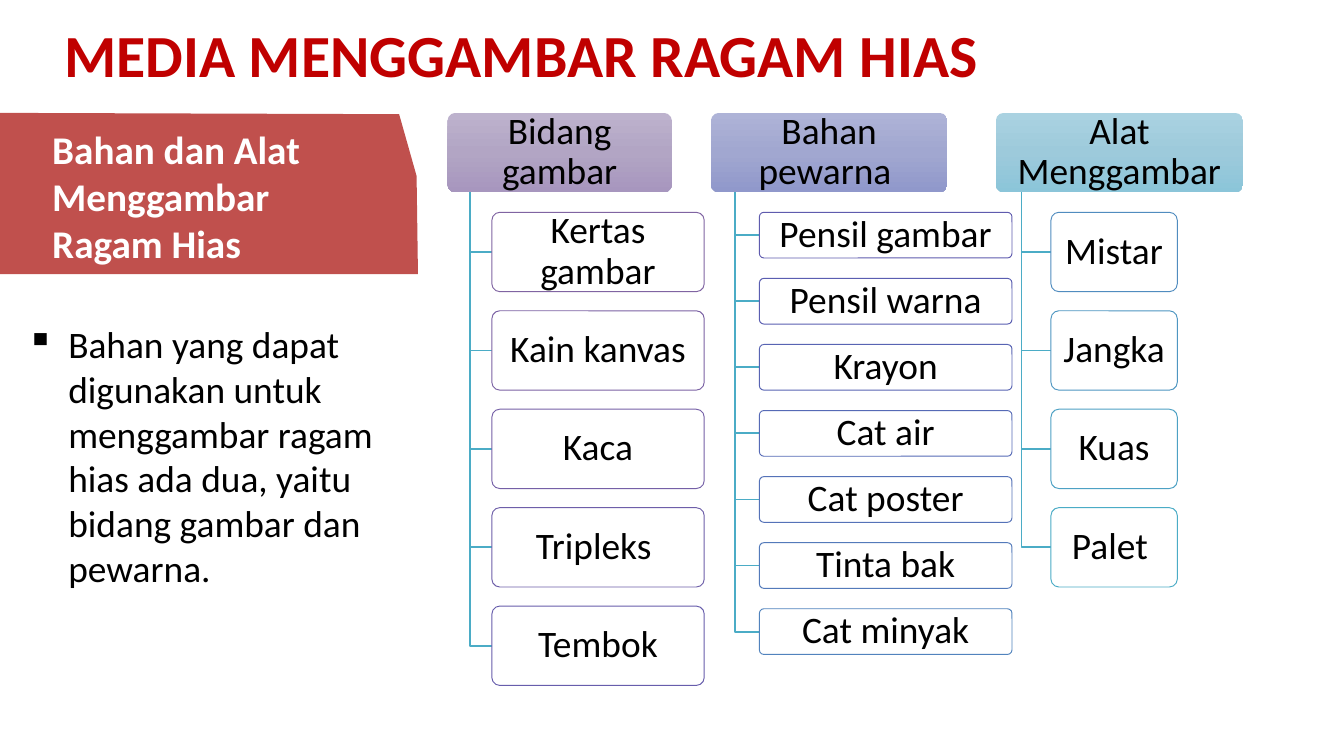
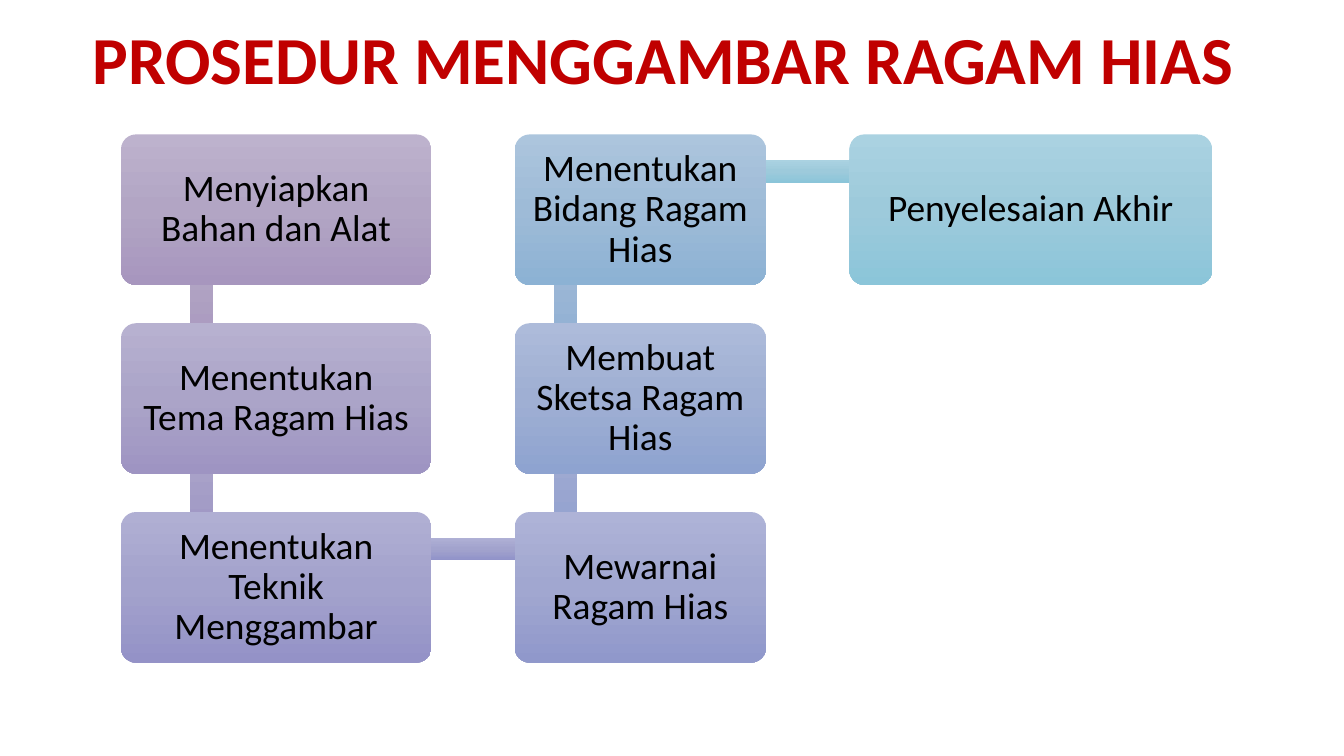
import colorsys
import copy

import pptx
import pptx.dml.color
import pptx.enum.shapes
import pptx.enum.text
import pptx.oxml.ns
import pptx.util
from lxml import etree

RGBColor = pptx.dml.color.RGBColor
Inches = pptx.util.Inches
Pt = pptx.util.Pt
PRESET = pptx.enum.shapes.MSO_SHAPE
ALIGN = pptx.enum.text.PP_ALIGN
ANCHOR = pptx.enum.text.MSO_ANCHOR
FIT = pptx.enum.text.MSO_AUTO_SIZE.SHAPE_TO_FIT_TEXT
qn = pptx.oxml.ns.qn

FONT = "Calibri"
BLACK = RGBColor(0x00, 0x00, 0x00)
WHITE = RGBColor(0xFF, 0xFF, 0xFF)
TITLE_RED = RGBColor(0xC0, 0x00, 0x00)
BANNER_RED = RGBColor(0xC0, 0x50, 0x4D)
PURPLE = RGBColor(0x80, 0x64, 0xA2)
TEAL = RGBColor(0x4B, 0xAC, 0xC6)
STEP_TONES = [[RGBColor.from_string(tone) for tone in tones.split()] for tones in (
    "BDB2CD B2A5C4 A796BE", "B7B1D0 ABA4C8 9E94C2", "B0AFD3 A3A2CC 9492C7",
    "AEB3D7 A1A7D0 9098CB", "ADBBDA 9FAFD3 8EA3D0", "ACC5DD 9EBBD7 8CB2D4",
    "AAD2E1 9DCADB 8BC5D9")]
LINK_TONES = [[RGBColor.from_string(tone) for tone in tones.split()] for tones in (
    "BDB2CD B2A5C4 A796BE", "B6B0D1 AAA3C9 9C94C3", "AFB0D5 A2A3CD 9193C9",
    "ADB7D9 A0ABD2 8F9ECE", "ACC3DD 9EB8D6 8DAED3", "AAD2E1 9DCADB 8BC5D9")]


def write(shape, lines, size, color, bold=False, align=ALIGN.LEFT, spacing=None):
    frame = shape.text_frame
    frame.word_wrap = True
    frame.text = "\n".join(lines)
    for paragraph in frame.paragraphs:
        paragraph.alignment = align
        paragraph.line_spacing = spacing
        for run in paragraph.runs:
            run.font.name = FONT
            run.font.size = Pt(size)
            run.font.bold = bold
            run.font.color.rgb = color
    return frame


def add_block(slide, preset, box, tones=None, label=None, inset=0):
    block = slide.shapes.add_shape(preset, *[Inches(length) for length in box])
    block.shadow.inherit = False
    block.line.fill.background()
    if tones:
        block.fill.gradient()
        block.fill.gradient_angle = 270
        block._element.spPr.find(qn("a:gradFill")).set("rotWithShape", "0")
        first = block.fill.gradient_stops[0]._gs
        first.addnext(copy.deepcopy(first))
        for stop, position, tone in zip(block.fill.gradient_stops, (0, 0.5, 1), tones):
            stop.position = position
            stop.color.rgb = tone
    if preset == PRESET.ROUNDED_RECTANGLE:
        block.adjustments[0] = 0.1
    if label:
        frame = write(block, [label], 20, BLACK, align=ALIGN.CENTER, spacing=0.9)
        frame.vertical_anchor = ANCHOR.MIDDLE
        frame.margin_left = frame.margin_right = Inches(inset)
        frame.margin_top = frame.margin_bottom = Inches(inset)
    return block


deck = pptx.Presentation()
deck.slide_width = Inches(10)
deck.slide_height = deck.slide_width * 9 // 16

slides = []
for heading, size, height, align in [
    ("MEDIA MENGGAMBAR RAGAM HIAS", 32, 0.64, ALIGN.LEFT),
    ("PROSEDUR MENGGAMBAR RAGAM HIAS", 36, 0.71, ALIGN.CENTER),
]:
    slide = deck.slides.add_slide(deck.slide_layouts[6])
    title = slide.shapes.add_textbox(Inches(0.38), Inches(0.08), Inches(9.11), Inches(height))
    write(title, [heading], size, TITLE_RED, bold=True, align=align).auto_size = FIT
    slides.append(slide)
media, procedure = slides

outline = media.shapes.build_freeform(Inches(-0.03), Inches(0.84))
outline.add_line_segments([(Inches(x), Inches(y)) for x, y in
                           [(2.97, 0.85), (3.1, 1.31), (3.11, 2.04), (-0.03, 2.04)]])
banner = outline.convert_to_shape()
banner.shadow.inherit = False
banner.fill.solid()
banner.fill.fore_color.rgb = BANNER_RED
banner.line.fill.background()
subtitle = media.shapes.add_textbox(Inches(0.29), Inches(0.88), Inches(2.82), Inches(1.16))
write(subtitle, ["Bahan dan Alat", "Menggambar", "Ragam Hias"], 21, WHITE, bold=True).auto_size = FIT

summary = media.shapes.add_textbox(Inches(0.1), Inches(2.34), Inches(2.85), Inches(2.12))
write(summary, ["Bahan yang dapat digunakan untuk menggambar ragam hias ada dua, "
                "yaitu bidang gambar dan pewarna."], 20, BLACK).auto_size = FIT
bullet = summary.text_frame.paragraphs[0]._p.get_or_add_pPr()
bullet.set("marL", str(Inches(0.31)))
bullet.set("indent", str(Inches(-0.31)))
etree.SubElement(bullet, qn("a:buChar")).set("char", "▪")

HEAD_TOP, HEAD_HEIGHT, ITEM_TOP = 0.84, 0.59, 1.58
TALL = (0.59, (4.51 - ITEM_TOP) / 4)
SHORT = (0.34, (4.53 - ITEM_TOP) / 6)
groups = [
    ("Bidang gambar", 3.33, 1.67, 3.5, 3.66, 1.58, TALL, STEP_TONES[0],
     ["Kertas gambar", "Kain kanvas", "Kaca", "Tripleks ", "Tembok"]),
    ("Bahan pewarna ", 5.29, 1.76, 5.47, 5.65, 1.88, SHORT, STEP_TONES[3],
     ["Pensil gambar", "Pensil warna", "Krayon", "Cat air", "Cat poster", "Tinta bak",
      "Cat minyak"]),
    ("Alat Menggambar", 7.41, 1.84, 7.6, 7.82, 0.94, TALL, STEP_TONES[6],
     ["Mistar", "Jangka ", "Kuas", "Palet "]),
]
item_count = sum(len(group[-1]) for group in groups)
purple_hls, teal_hls = [colorsys.rgb_to_hls(*[channel / 255 for channel in color])
                        for color in (PURPLE, TEAL)]
item_number = 0
for head, head_left, head_width, trunk, left, width, (height, pitch), tones, items in groups:
    add_block(media, PRESET.ROUNDED_RECTANGLE, (head_left, HEAD_TOP, head_width, HEAD_HEIGHT),
              tones, head, 0.05)
    for row, item in enumerate(items):
        top = ITEM_TOP + row * pitch
        middle = Inches(top + height / 2)
        route = media.shapes.build_freeform(Inches(trunk), Inches(HEAD_TOP + HEAD_HEIGHT))
        route.add_line_segments([(Inches(trunk), middle), (Inches(left), middle)], close=False)
        branch = route.convert_to_shape()
        branch.shadow.inherit = False
        branch.fill.background()
        branch.line.color.rgb = TEAL
        branch.line.width = Pt(1)

        card = add_block(media, PRESET.ROUNDED_RECTANGLE, (left, top, width, height),
                         label=item, inset=0.05)
        card.fill.solid()
        card.fill.fore_color.rgb = WHITE
        white_fill = card._element.spPr.find(qn("a:solidFill"))[0]
        etree.SubElement(white_fill, qn("a:alpha")).set("val", "90000")
        progress = item_number / (item_count - 1)
        hls = [a + (b - a) * progress for a, b in zip(purple_hls, teal_hls)]
        card.line.color.rgb = RGBColor(*[round(channel * 255)
                                         for channel in colorsys.hls_to_rgb(*hls)])
        card.line.width = Pt(0.5)
        item_number += 1

STEP_TOP, STEP_PITCH, STEP_HEIGHT, LINK_HEIGHT = 1, 1.405, 1.12, 0.17
links = [(0.8, 1.9, 1.4, 90), (0.8, 3.3, 1.4, 90), (1.5, 4, 2.7, 0),
         (3.51, 3.3, 1.4, 270), (3.51, 1.9, 1.4, 270), (4.22, 1.19, 2.89, 0)]
for (left, top, width, turn), tones in zip(links, LINK_TONES):
    link = add_block(procedure, PRESET.RECTANGLE, (left, top, width, LINK_HEIGHT), tones)
    link.rotation = turn

steps = [
    ("Menyiapkan Bahan dan Alat", 0.9, 2.31, 0),
    ("Menentukan Tema Ragam Hias", 0.9, 2.31, 1),
    ("Menentukan Teknik Menggambar", 0.9, 2.31, 2),
    ("Mewarnai Ragam Hias", 3.83, 1.87, 2),
    ("Membuat Sketsa Ragam Hias", 3.83, 1.87, 1),
    ("Menentukan Bidang Ragam Hias", 3.83, 1.87, 0),
    ("Penyelesaian Akhir", 6.32, 2.7, 0),
]
for (step, left, width, row), tones in zip(steps, STEP_TONES):
    add_block(procedure, PRESET.ROUNDED_RECTANGLE,
              (left, STEP_TOP + row * STEP_PITCH, width, STEP_HEIGHT), tones, step, 0.1)

deck.save("out.pptx")
